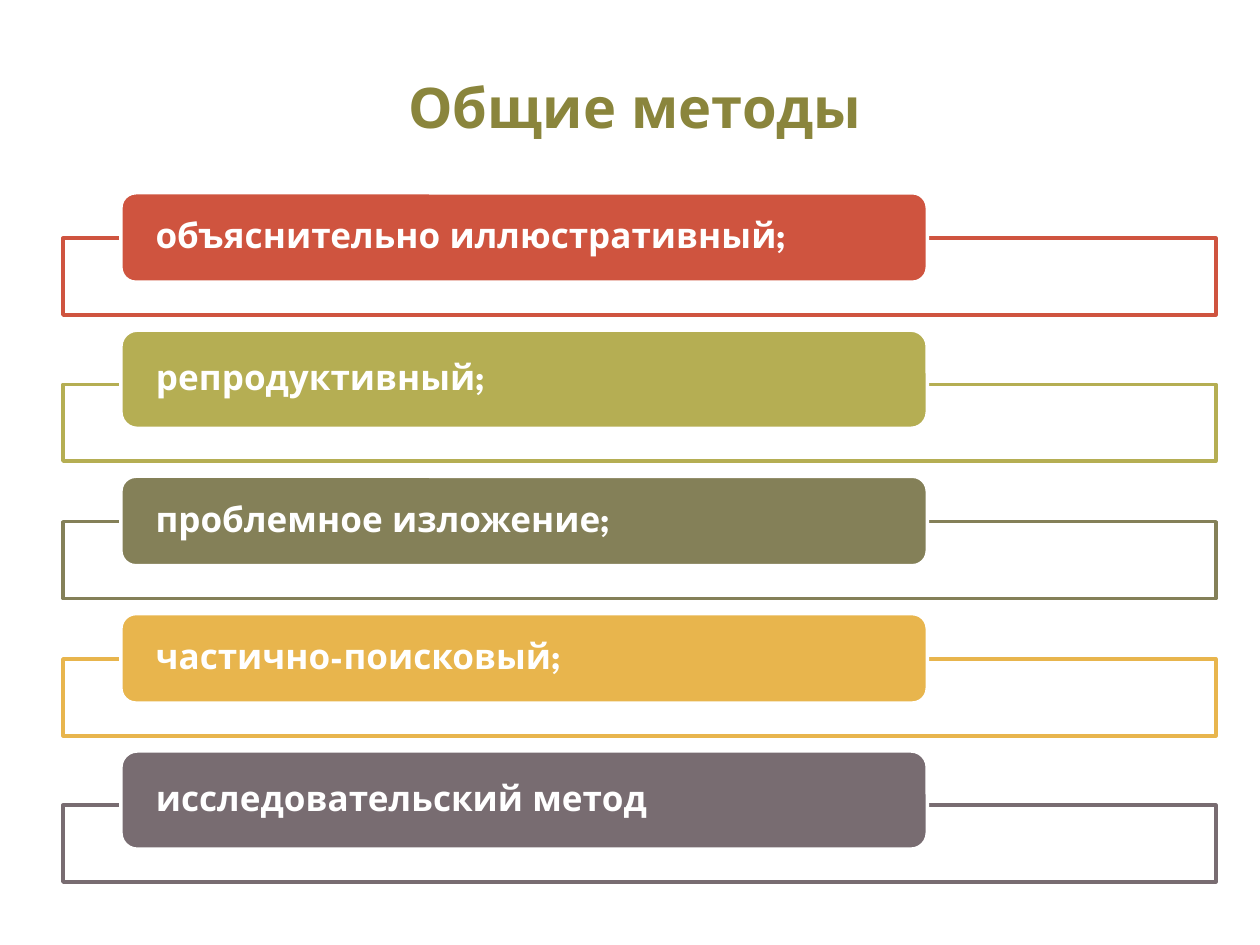
"""Build the slide of general methods as a stack of labelled frames."""
import dataclasses

import pptx
import pptx.dml.color
import pptx.enum.shapes
import pptx.enum.text
import pptx.util


@dataclasses.dataclass(frozen=True)
class Theme:
    font: str = "League Spartan"
    white: str = "FFFFFF"
    title_color: str = "8A853C"
    accents: tuple = ("CF543F", "B5AE53", "848058", "E8B54D", "786C71")
    title_size: int = 32
    label_size: int = 20
    line_width: int = 2


class SlideBuilder:
    COLUMNS, ROWS = 100, 75

    def __init__(self, presentation, theme):
        self.theme = theme
        self.column = presentation.slide_width / self.COLUMNS
        self.row = presentation.slide_height / self.ROWS
        self.slide = presentation.slides.add_slide(presentation.slide_layouts[5])

    def place(self, left, top, width, height):
        return (round(left * self.column), round(top * self.row),
                round(width * self.column), round(height * self.row))

    def set_text(self, shape, text, size, color, alignment):
        frame = shape.text_frame
        frame.text = text
        frame.word_wrap = True
        frame.vertical_anchor = pptx.enum.text.MSO_ANCHOR.MIDDLE
        paragraph = frame.paragraphs[0]
        paragraph.alignment = alignment
        font = paragraph.runs[0].font
        font.name, font.size, font.bold = self.theme.font, pptx.util.Pt(size), True
        font.color.rgb = pptx.dml.color.RGBColor.from_string(color)
        return paragraph

    def title(self, text, *area):
        shape = self.slide.shapes.title
        shape.left, shape.top, shape.width, shape.height = self.place(*area)
        self.set_text(shape, text, self.theme.title_size, self.theme.title_color,
                      pptx.enum.text.PP_ALIGN.CENTER)

    def box(self, kind, fill, line, *area):
        shape = self.slide.shapes.add_shape(kind, *self.place(*area))
        shape.shadow.inherit = False
        shape.fill.solid()
        shape.fill.fore_color.rgb = pptx.dml.color.RGBColor.from_string(fill)
        shape.line.color.rgb = pptx.dml.color.RGBColor.from_string(line)
        shape.line.width = pptx.util.Pt(self.theme.line_width)
        return shape

    def method(self, text, color, top, height):
        kinds = pptx.enum.shapes.MSO_SHAPE
        white = self.theme.white
        self.box(kinds.RECTANGLE, white, color, 5, top + height - 3.5, 91.5, 6.1)
        tab = self.box(kinds.ROUNDED_RECTANGLE, color, white, 9.6, top, 64, height)
        paragraph = self.set_text(tab, text, self.theme.label_size, white,
                                  pptx.enum.text.PP_ALIGN.LEFT)
        paragraph.line_spacing = 0.9
        frame = tab.text_frame
        frame.margin_left = frame.margin_right = round(2.4 * self.column)
        frame.margin_top = frame.margin_bottom = 0


def main():
    presentation = pptx.Presentation()
    presentation.slide_width = pptx.util.Inches(10)
    presentation.slide_height = pptx.util.Inches(7.5)
    theme = Theme()
    builder = SlideBuilder(presentation, theme)
    builder.title("Общие методы", 5.9, 5.2, 89, 6.4)

    short, tall, gap = 7.1, 7.8, 3.8
    methods = (
        ("объяснительно иллюстративный;", short),
        ("репродуктивный;", tall),
        ("проблемное изложение;", short),
        ("частично-поисковый;", short),
        ("исследовательский метод", tall),
    )
    top = 15.3
    for (text, height), color in zip(methods, theme.accents):
        builder.method(text, color, top, height)
        top += height + gap
    presentation.save("out.pptx")


if __name__ == "__main__":
    main()
